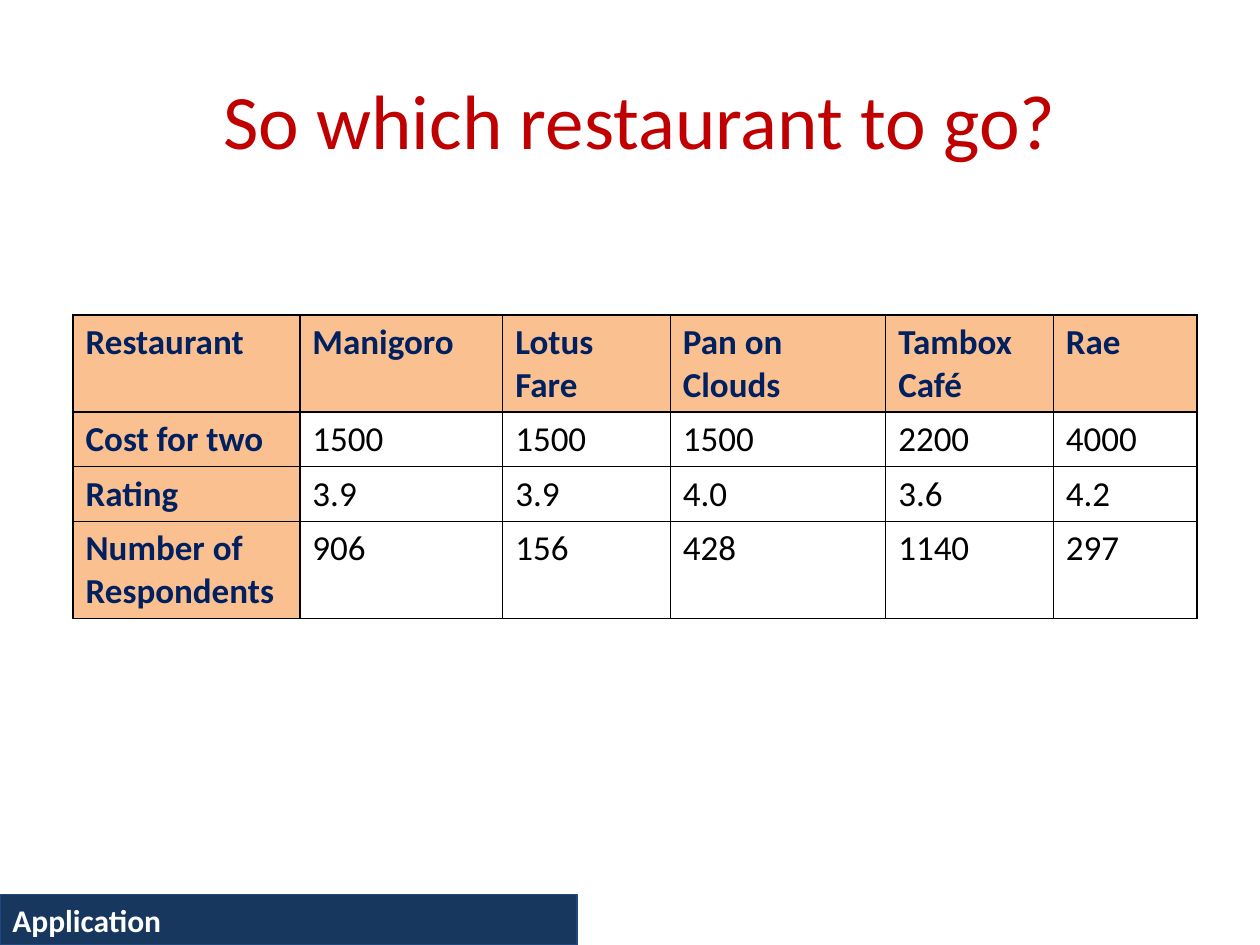
from dataclasses import dataclass

from lxml.etree import SubElement
from pptx import Presentation
from pptx.dml.color import RGBColor as RGB
from pptx.enum.shapes import MSO_SHAPE as Shape
from pptx.enum.text import MSO_ANCHOR as Anchor, PP_ALIGN as Align
from pptx.oxml.ns import qn
from pptx.util import Inches, Pt


@dataclass(frozen=True)
class Theme:
    font: str = "Calibri"
    red: str = "C00000"
    navy: str = "002060"
    bar: str = "17375E"
    edge: str = "1F497D"
    peach: str = "FAC090"
    white: str = "FFFFFF"
    black: str = "000000"
    title: int = 44
    body: int = 20
    label: int = 18


THEME = Theme()

ROWS = [
    ["Restaurant", "Manigoro", "Lotus Fare", "Pan on Clouds", "Tambox Café", "Rae"],
    ["Cost for two", "1500", "1500", "1500", "2200", "4000"],
    ["Rating", "3.9", "3.9", "4.0", "3.6", "4.2"],
    ["Number of Respondents", "906", "156", "428", "1140", "297"],
]
WIDTHS = [1.8, 1.61, 1.33, 1.71, 1.33, 1.14]
HEIGHTS = [0.77, 0.43, 0.43, 0.77]


def write(frame, text, size, color, bold=False, align=Align.LEFT):
    para = frame.paragraphs[0]
    para.alignment = align
    run = para.add_run()
    run.text = text
    look = {"name": THEME.font, "size": Pt(size), "bold": bold}
    for key, value in look.items():
        setattr(run.font, key, value)
    run.font.color.rgb = RGB.from_string(color)


def rule_cell(cell):
    """Draw a thin black border on all four sides."""
    props = cell._tc.get_or_add_tcPr()
    for at, side in enumerate(("lnL", "lnR", "lnT", "lnB")):
        line = SubElement(props, qn(f"a:{side}"), w=str(Pt(1)))
        fill = SubElement(line, qn("a:solidFill"))
        SubElement(fill, qn("a:srgbClr"), val=THEME.black)
        props.insert(at, line)


def add_footer(slide, box):
    bar = slide.shapes.add_shape(Shape.RECTANGLE, *map(Inches, box))
    bar.shadow.inherit = False
    bar.fill.solid()
    bar.fill.fore_color.rgb = RGB.from_string(THEME.bar)
    bar.line.color.rgb = RGB.from_string(THEME.edge)
    bar.line.width = Pt(0.75)
    bar.text_frame.vertical_anchor = Anchor.MIDDLE
    write(bar.text_frame, "Application", THEME.label, THEME.white, bold=True)


def add_title(slide, box):
    frame = slide.shapes.add_textbox(*map(Inches, box)).text_frame
    for key, value in {"word_wrap": True, "vertical_anchor": Anchor.MIDDLE}.items():
        setattr(frame, key, value)
    write(frame, "So which restaurant to go?", THEME.title, THEME.red,
          align=Align.CENTER)


def add_grid(slide, box):
    size = len(ROWS), len(WIDTHS)
    table = slide.shapes.add_table(*size, *map(Inches, box)).table
    for col, width in zip(table.columns, WIDTHS):
        col.width = Inches(width)
    for row, height in zip(table.rows, HEIGHTS):
        row.height = Inches(height)
    for r, row in enumerate(ROWS):
        for c, text in enumerate(row):
            cell = table.cell(r, c)
            head = r == 0 or c == 0
            cell.fill.solid()
            cell.fill.fore_color.rgb = RGB.from_string(
                THEME.peach if head else THEME.white)
            rule_cell(cell)
            write(cell.text_frame, text, THEME.body,
                  THEME.navy if head else THEME.black, bold=head)


def main():
    deck = Presentation()
    deck.slide_width, deck.slide_height = Inches(10), Inches(7.5)
    slide = deck.slides.add_slide(deck.slide_layouts[6])
    # Footer label, heading and comparison table
    add_footer(slide, (0, 7.1, 4.58, 0.4))
    add_title(slide, (0.58, 0.32, 9, 1.25))
    add_grid(slide, (0.58, 2.5, sum(WIDTHS), sum(HEIGHTS)))
    deck.save("out.pptx")


if __name__ == "__main__":
    main()
